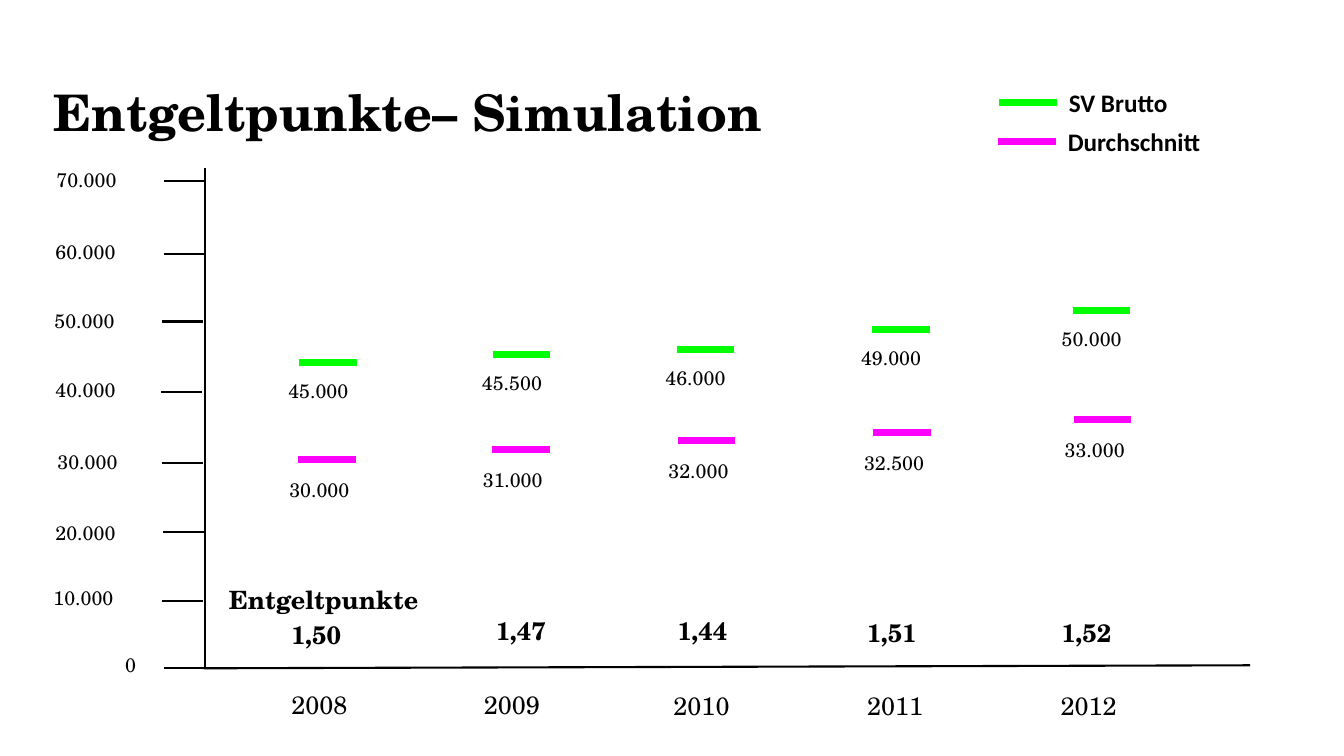
from lxml.etree import SubElement
from pptx import Presentation
from pptx.dml.color import RGBColor
from pptx.enum.shapes import MSO_CONNECTOR as Connector
from pptx.enum.text import MSO_ANCHOR as Anchor, MSO_AUTO_SIZE as AutoSize, PP_ALIGN as Align
from pptx.oxml.ns import qn
from pptx.util import Inches, Pt

COLORS = {"ink": "000000", "gross": "00FF00", "average": "FF00FF"}
SERIF = "TeX Gyre Schola"
SANS = "Calibri"

SCALE = [
    ("0", 1.19, 6.43, 1.63, 6.63),
    ("10.000", 0.48, 5.76, 1.61, 5.96),
    ("20.000", 0.5, 5.12, 1.62, 5.28),
    ("30.000", 0.52, 4.41, 1.61, 4.59),
    ("40.000", 0.5, 3.7, 1.6, 3.89),
    ("50.000", 0.49, 3.02, 1.61, 3.19),
    ("60.000", 0.5, 2.33, 1.63, 2.52),
    ("70.000", 0.51, 1.62, 1.63, 1.8),
]
YEARS = [
    ("2008", 2.84, 6.79),
    ("2009", 4.75, 6.79),
    ("2010", 6.63, 6.8),
    ("2011", 8.55, 6.8),
    ("2012", 10.47, 6.8),
]
POINTS = [
    ("1,50", 2.84, 6.09),
    ("1,47", 4.87, 6.06),
    ("1,44", 6.67, 6.06),
    ("1,51", 8.55, 6.07),
    ("1,52", 10.48, 6.07),
]
GROSS = [
    ("45.000", 2.97, 3.6),
    ("45.500", 4.89, 3.52),
    ("46.000", 6.71, 3.47),
    ("49.000", 8.65, 3.27),
    ("50.000", 10.64, 3.08),
]
AVERAGE = [
    ("30.000", 2.96, 4.56),
    ("31.000", 4.88, 4.46),
    ("32.000", 6.72, 4.37),
    ("32.500", 8.66, 4.29),
    ("33.000", 10.65, 4.16),
]
SERIES = [("gross", GROSS, -0.16, 0.11), ("average", AVERAGE, -0.14, 0.13)]
LEGEND = [("SV Brutto", "gross", 9.91, 1.02, 1.59), ("Durchschnitt", "average", 9.9, 1.4, 1.99)]


class ChartPage:
    def __init__(self, page):
        self.page = page

    def fill_text(self, box, text, size, bold=False, font=SERIF):
        frame = box.text_frame
        frame.word_wrap = True
        frame.auto_size = AutoSize.SHAPE_TO_FIT_TEXT
        frame.vertical_anchor = Anchor.TOP
        frame.margin_left = frame.margin_right = Inches(0.05)
        frame.margin_top = frame.margin_bottom = Inches(0.05)
        para = frame.paragraphs[0]
        para.alignment = Align.LEFT
        span = para.add_run()
        span.text = text
        span.font.name = font
        span.font.size = Pt(size)
        span.font.bold = bold
        span.font.color.rgb = RGBColor.from_string(COLORS["ink"])

    def title(self, text, left, top, width, height):
        box = self.page.shapes.title
        box.left, box.top = Inches(left), Inches(top)
        box.width, box.height = Inches(width), Inches(height)
        self.fill_text(box, text, 36, bold=True)

    def label(self, text, left, top, width, height, size, **style):
        box = self.page.shapes.add_textbox(
            Inches(left), Inches(top), Inches(width), Inches(height))
        self.fill_text(box, text, size, **style)

    def line(self, x1, y1, x2, y2, color="ink", weight=1.5):
        line = self.page.shapes.add_connector(
            Connector.STRAIGHT, Inches(x1), Inches(y1), Inches(x2), Inches(y2))
        line.line.color.rgb = RGBColor.from_string(COLORS[color])
        line.line.width = Pt(weight)
        SubElement(line._element.spPr, qn("a:effectLst"))

    def marker(self, left, top, color):
        self.line(left, top, left + 0.57, top, color, 5)


def main():
    deck = Presentation()
    deck.slide_width, deck.slide_height = Inches(13.33), Inches(7.5)
    chart = ChartPage(deck.slides.add_slide(deck.slide_layouts[5]))
    chart.title("Entgeltpunkte– Simulation", 0.48, 0.75, 8.44, 0.67)

    chart.line(2.03, 1.67, 2.03, 6.64)
    chart.line(2.02, 6.63, 12.4, 6.6)
    for text, left, top, tick_left, tick_top in SCALE:
        chart.line(tick_left, tick_top, tick_left + 0.4, tick_top)
        chart.label(text, left, top, 0.3 if text == "0" else 1.83, 0.32, 14)

    for year, left, top in YEARS:
        chart.label(year, left, top, 1.03, 0.39, 18)

    for color, values, shift, drop in SERIES:
        for text, left, top in values:
            chart.marker(left, top, color)
            chart.label(text, left + shift, top + drop, 1.06, 0.32, 14)

    chart.label("Entgeltpunkte", 2.22, 5.75, 2.14, 0.39, 18, bold=True)
    for text, left, top in POINTS:
        chart.label(text, left, top, 0.74, 0.39, 18, bold=True)

    for text, color, left, top, width in LEGEND:
        chart.marker(left, top, color)
        chart.label(text, left + 0.64, top - 0.2, width, 0.41, 18, bold=True, font=SANS)

    deck.save("out.pptx")


if __name__ == "__main__":
    main()
